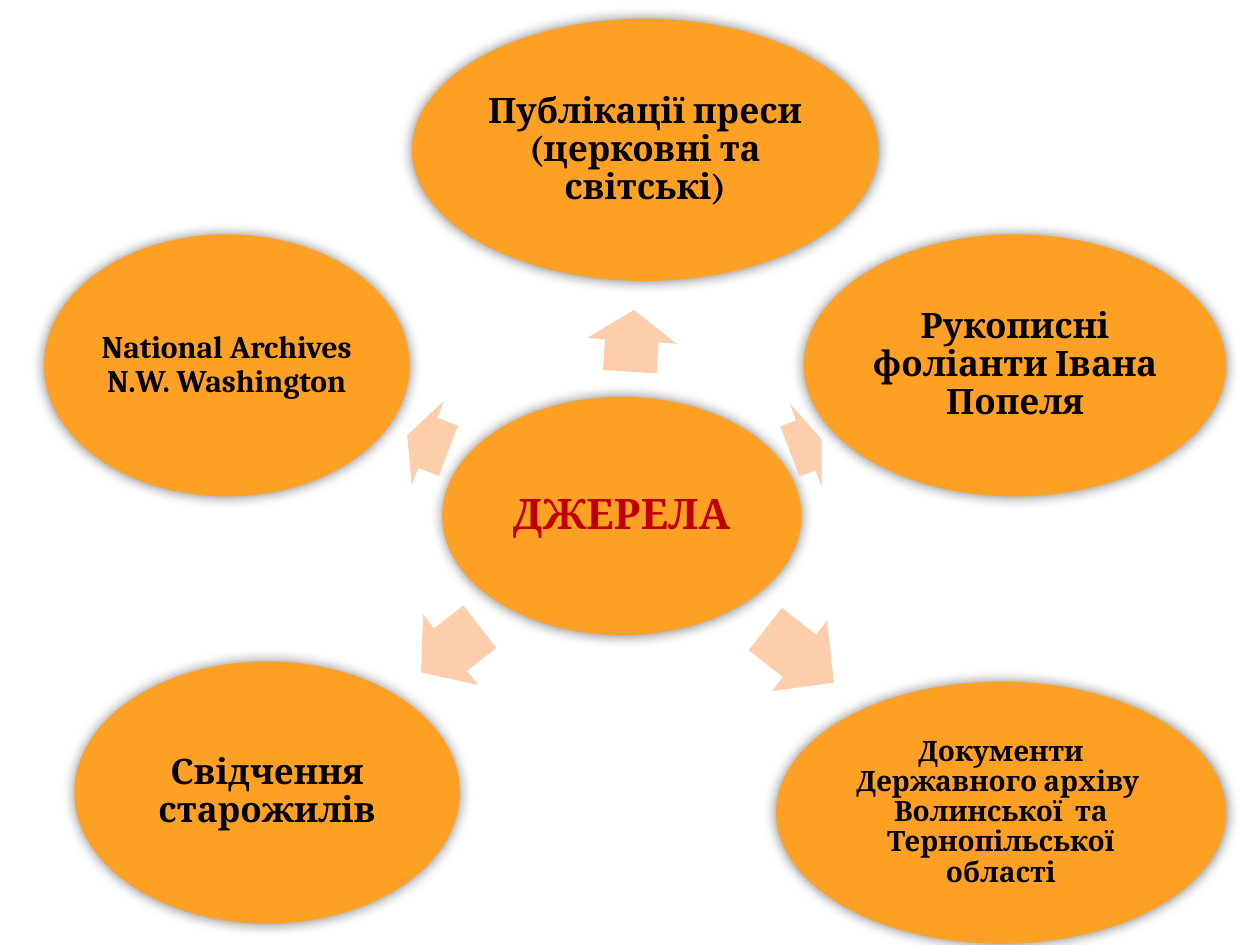
from lxml import etree
from pptx import Presentation
from pptx import util as u
from pptx.dml.color import RGBColor
from pptx.enum import shapes, text
from pptx.oxml.ns import qn

ORANGE, PEACH, BLACK, RED = "FDA023", "FECDAC", "000000", "C00000"
SOURCE_HEIGHT = 2.08
ARROW_HEIGHT = 0.71

# left, top, width, text, size
SOURCES = [
    (3.27, 0.15, 3.7, "Публікації преси (церковні та світські)", 20),
    (6.38, 1.86, 3.35, "Рукописні фоліанти Івана Попеля", 20),
    (6.16, 5.41, 3.57, "Документи Державного архіву  Волинської  та Тернопільської області", 16),
    (0.59, 5.25, 3.06, "Свідчення старожилів", 20),
    (0.35, 1.86, 2.9, "National Archives N.W. Washington", 18),
]
# left, top, width, rotation
ARROWS = [
    (4.77, 2.35, 0.49, 273.7),
    (6.26, 3.18, 0.27, 339),
    (6, 4.85, 0.69, 38),
    (3.28, 4.8, 0.59, 142.1),
    (3.22, 3.16, 0.35, 201),
]


def add_filled(s, kind, left, top, width, height, color):
    sp = s.shapes.add_shape(kind, *map(u.Inches, (left, top, width, height)))
    sp.shadow.inherit = False
    sp.fill.solid()
    sp.fill.fore_color.rgb = RGBColor.from_string(color)
    sp.line.fill.background()
    return sp


def add_glow_shadow(sp):
    """Soft half-transparent shadow on all sides."""
    effects = sp._element.spPr.find(qn("a:effectLst"))
    shadow = etree.SubElement(effects, qn("a:outerShdw"),
                              blurRad=str(u.Pt(7.5)), dist="0", dir="0")
    clr = etree.SubElement(shadow, qn("a:srgbClr"), val=BLACK)
    etree.SubElement(clr, qn("a:alpha"), val="50000")


def add_bubble(s, left, top, width, height, label, size, color=BLACK):
    sp = add_filled(s, shapes.MSO_SHAPE.OVAL, left, top, width, height, ORANGE)
    add_glow_shadow(sp)
    tf = sp.text_frame
    tf.word_wrap = True
    tf.vertical_anchor = text.MSO_ANCHOR.MIDDLE
    tf.margin_left = tf.margin_right = u.Inches(0.03)
    tf.margin_top = tf.margin_bottom = u.Inches(0.03)
    p = tf.paragraphs[0]
    p.text = label
    p.alignment = text.PP_ALIGN.CENTER
    p.line_spacing = 0.9
    p.font.name = "Cambria"
    p.font.size = u.Pt(size)
    p.font.bold = True
    p.font.color.rgb = RGBColor.from_string(color)


def add_arrow(s, left, top, width, rotation):
    sp = add_filled(s, shapes.MSO_SHAPE.RIGHT_ARROW, left, top, width, ARROW_HEIGHT, PEACH)
    sp.adjustments[0] = 0.6
    sp.adjustments[1] = 0.5
    sp.rotation = rotation


def main():
    prs = Presentation()
    prs.slide_width, prs.slide_height = u.Inches(10), u.Inches(7.5)
    s = prs.slides.add_slide(prs.slide_layouts[6])

    # Central topic
    add_bubble(s, 3.51, 3.15, 2.85, 1.89, "ДЖЕРЕЛА", 24, RED)

    # Each source with the arrow that leads to it
    for arrow, (left, top, width, label, size) in zip(ARROWS, SOURCES):
        add_arrow(s, *arrow)
        add_bubble(s, left, top, width, SOURCE_HEIGHT, label, size)

    prs.save("out.pptx")


if __name__ == "__main__":
    main()
